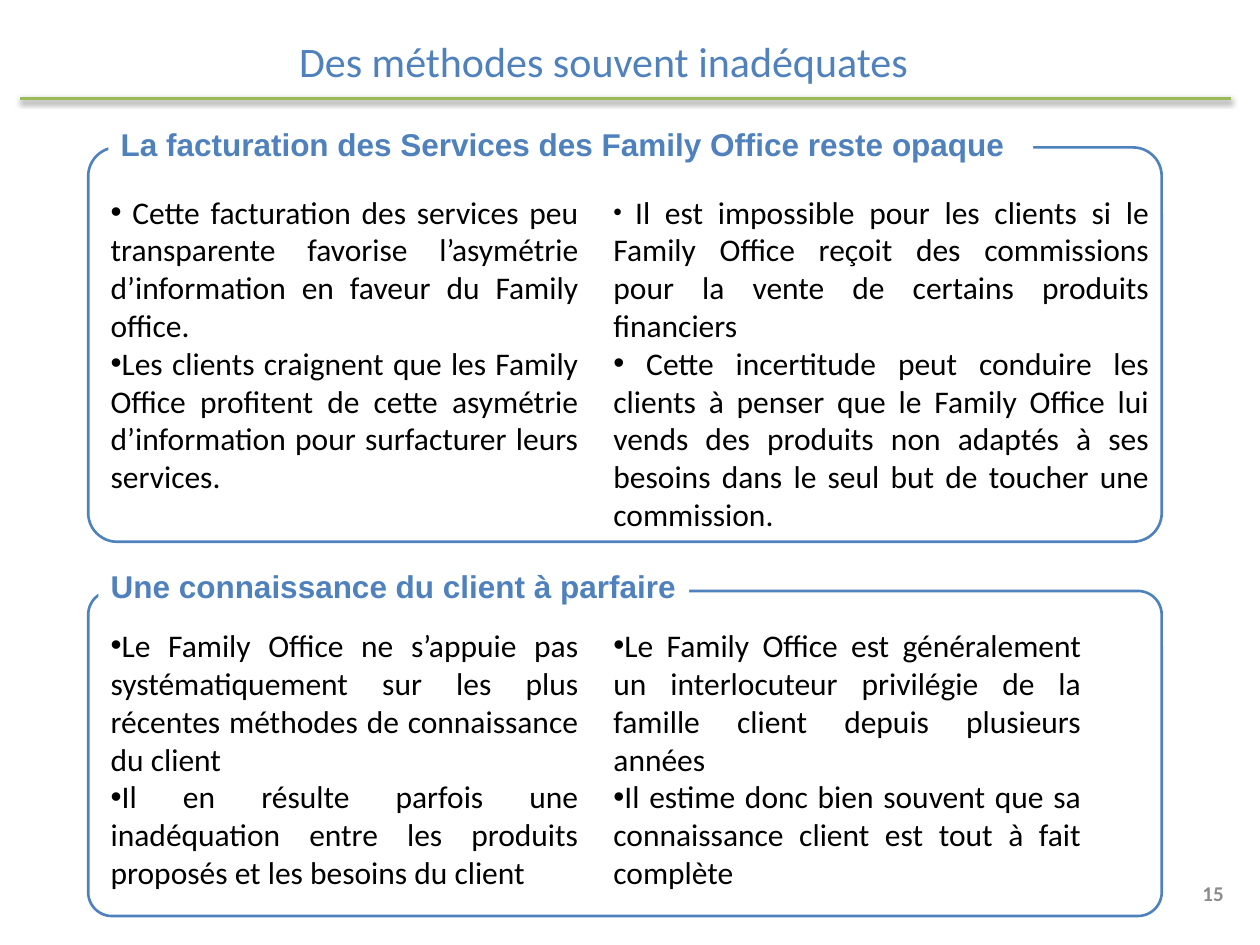
import dataclasses

import lxml.etree
import pptx
import pptx.dml.color
import pptx.enum.shapes
import pptx.enum.text
import pptx.oxml
import pptx.oxml.ns
import pptx.util

ALIGN = pptx.enum.text.PP_ALIGN
ANCHOR = pptx.enum.text.MSO_ANCHOR
PRESET = pptx.enum.shapes.MSO_SHAPE
COLUMNS, ROWS = 100, 75
SLIDE_WIDTH, SLIDE_HEIGHT = pptx.util.Inches(10), pptx.util.Inches(7.5)


@dataclasses.dataclass(frozen=True)
class Theme:
    blue: str = "4F81BD"
    green: str = "9BBB59"
    grey: str = "8C8C8C"
    black: str = "000000"
    white: str = "FFFFFF"
    body_font: str = "Calibri"
    heading_font: str = "Arial"
    title_size: int = 24
    body_size: int = 18
    small_size: int = 14
    number_size: int = 12
    rule_width: float = 2
    frame_width: float = 1.5


THEME = Theme()


@dataclasses.dataclass(frozen=True)
class Box:
    column: float
    row: float
    columns: float
    rows: float

    def inner(self, column, row, columns, rows):
        return Box(self.column + column, self.row + row, columns, rows)

    def emu(self):
        return (
            round(self.column * SLIDE_WIDTH / COLUMNS),
            round(self.row * SLIDE_HEIGHT / ROWS),
            round(self.columns * SLIDE_WIDTH / COLUMNS),
            round(self.rows * SLIDE_HEIGHT / ROWS),
        )


def rgb(value):
    return pptx.dml.color.RGBColor.from_string(value)


def add_text(slide, box, paragraphs, font=THEME.body_font, size=THEME.body_size,
             color=THEME.black, bold=False, align=ALIGN.LEFT, anchor=ANCHOR.TOP,
             wrap=True, bullet=None, fill=None):
    holder = slide.shapes.add_textbox(*box.emu())
    if fill:
        holder.fill.solid()
        holder.fill.fore_color.rgb = rgb(fill)
    frame = holder.text_frame
    frame.word_wrap = wrap
    frame.vertical_anchor = anchor
    for index, content in enumerate(paragraphs):
        paragraph = frame.paragraphs[0] if index == 0 else frame.add_paragraph()
        paragraph.alignment = align
        if bullet:
            properties = paragraph._p.get_or_add_pPr()
            bullet_font = lxml.etree.SubElement(properties, pptx.oxml.ns.qn("a:buFont"))
            bullet_font.set("typeface", THEME.heading_font)
            bullet_mark = lxml.etree.SubElement(properties, pptx.oxml.ns.qn("a:buChar"))
            bullet_mark.set("char", bullet)
        pieces = [(content, size)] if isinstance(content, str) else content
        for words, points in pieces:
            run = paragraph.add_run()
            run.text = words
            run.font.name = font
            run.font.size = pptx.util.Pt(points)
            run.font.bold = bold
            run.font.color.rgb = rgb(color)


def add_header(slide, box, title):
    add_text(slide, box.inner(20.9, 0, 50.8, 5), [title], size=THEME.title_size,
             color=THEME.blue, align=ALIGN.CENTER, wrap=False)
    left, top, width, height = box.emu()
    rule = slide.shapes.add_connector(
        pptx.enum.shapes.MSO_CONNECTOR.STRAIGHT,
        left, top + height, left + width, top + height)
    rule.line.color.rgb = rgb(THEME.green)
    rule.line.width = pptx.util.Pt(THEME.rule_width)
    rule._element.spPr.append(pptx.oxml.parse_xml(
        f'<a:effectLst {pptx.oxml.ns.nsdecls("a")}>'
        f'<a:outerShdw blurRad="{pptx.util.Pt(3.1)}" dist="{pptx.util.Pt(1.6)}" '
        f'dir="5400000" rotWithShape="0"><a:srgbClr val="{THEME.black}">'
        '<a:alpha val="38000"/></a:srgbClr></a:outerShdw></a:effectLst>'))


def add_panel(slide, box, heading, heading_box, left_points, left_box,
              right_points, right_box):
    border = slide.shapes.add_shape(PRESET.ROUNDED_RECTANGLE, *box.emu())
    border.adjustments[0] = 0.073
    border.shadow.inherit = False
    border.fill.background()
    border.line.color.rgb = rgb(THEME.blue)
    border.line.width = pptx.util.Pt(THEME.frame_width)
    add_text(slide, box.inner(*heading_box), [heading], font=THEME.heading_font,
             color=THEME.blue, bold=True, fill=THEME.white)
    for points, place in ((left_points, left_box), (right_points, right_box)):
        add_text(slide, box.inner(*place), points, align=ALIGN.JUSTIFY, bullet="•")


def add_page_number(slide, box, number):
    add_text(slide, box, [number], size=THEME.number_size, color=THEME.grey,
             bold=True, align=ALIGN.RIGHT, anchor=ANCHOR.MIDDLE)


def main():
    deck = pptx.Presentation()
    deck.slide_width, deck.slide_height = SLIDE_WIDTH, SLIDE_HEIGHT
    slide = deck.slides.add_slide(deck.slide_layouts[6])

    add_page_number(slide, Box(91.4, 68, 6.7, 5.7), "15")
    add_header(slide, Box(1.6, 2.3, 96.1, 5.5), "Des méthodes souvent inadéquates")
    add_panel(
        slide, Box(7, 11.7, 85.2, 31.3),
        heading="La facturation des Services des Family Office reste opaque",
        heading_box=(1.6, -2.3, 73.4, 7.1),
        left_points=[
            " Cette facturation des services peu transparente favorise l’asymétrie "
            "d’information en faveur du Family office. ",
            "Les clients craignent que les Family Office profitent de cette asymétrie "
            "d’information pour surfacturer leurs services.",
        ],
        left_box=(0.8, 3.1, 39.1, 25.2),
        right_points=[
            [(" ", THEME.small_size),
             ("Il est impossible pour les clients si le Family Office reçoit des "
              "commissions pour la vente de certains produits financiers",
              THEME.body_size)],
            " Cette incertitude peut conduire les clients à penser que le Family Office "
            "lui vends des produits non adaptés à ses besoins dans le seul but de "
            "toucher une commission.",
        ],
        right_box=(40.7, 3.1, 44.5, 30.6))
    add_panel(
        slide, Box(7, 46.9, 85.2, 25.8),
        heading="Une connaissance du client à parfaire",
        heading_box=(0.8, -2.4, 46.9, 7.1),
        left_points=[
            "Le Family Office ne s’appuie pas systématiquement sur les plus récentes "
            "méthodes de connaissance du client",
            "Il en résulte parfois une inadéquation entre les produits proposés et les "
            "besoins du client ",
        ],
        left_box=(0.8, 2.3, 39.1, 22.2),
        right_points=[
            "Le Family Office est généralement un interlocuteur privilégie de la "
            "famille client depuis plusieurs années",
            "Il estime donc bien souvent que sa connaissance client est tout à fait "
            "complète",
        ],
        right_box=(40.7, 2.3, 39.1, 22.2))
    deck.save("out.pptx")


if __name__ == "__main__":
    main()
